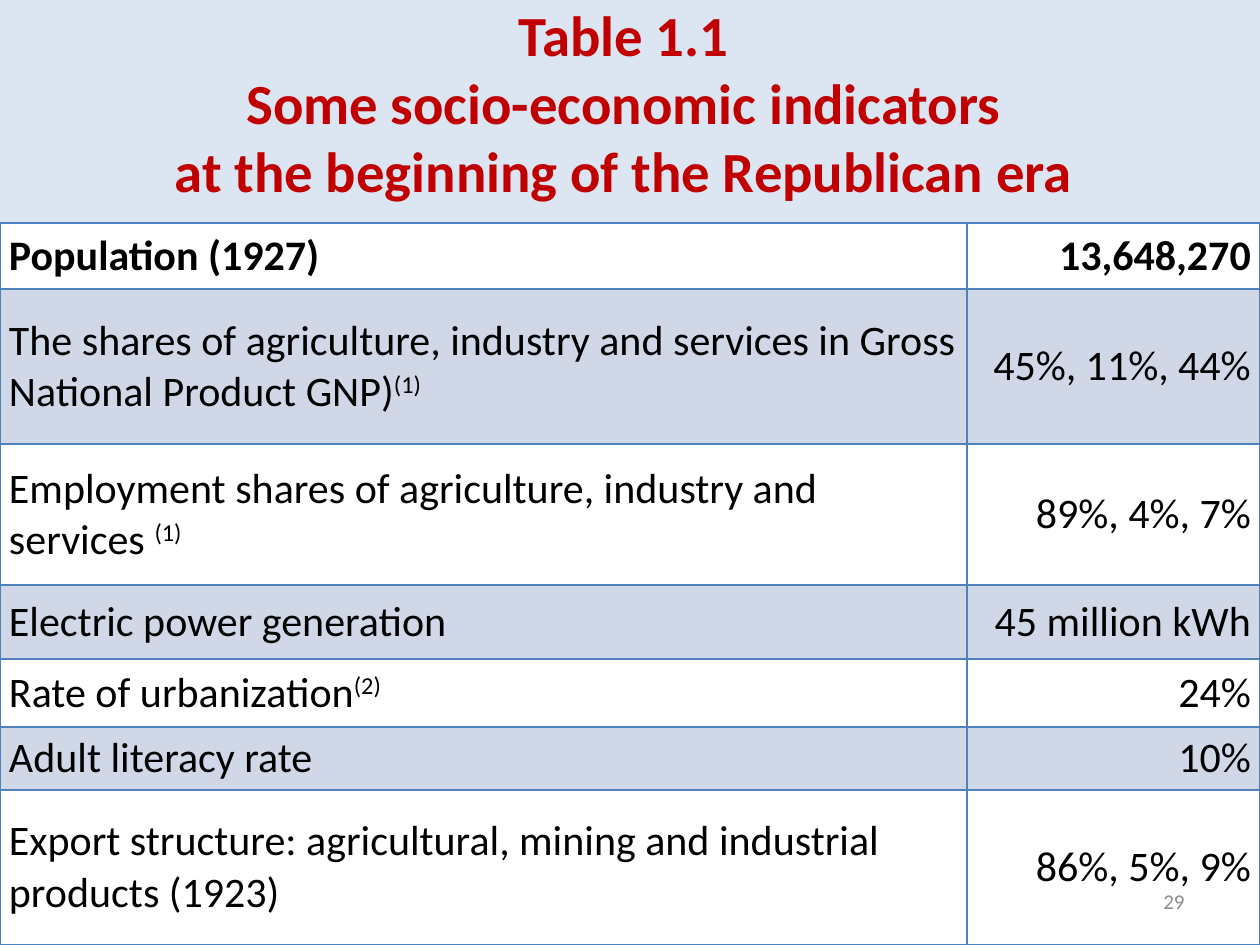
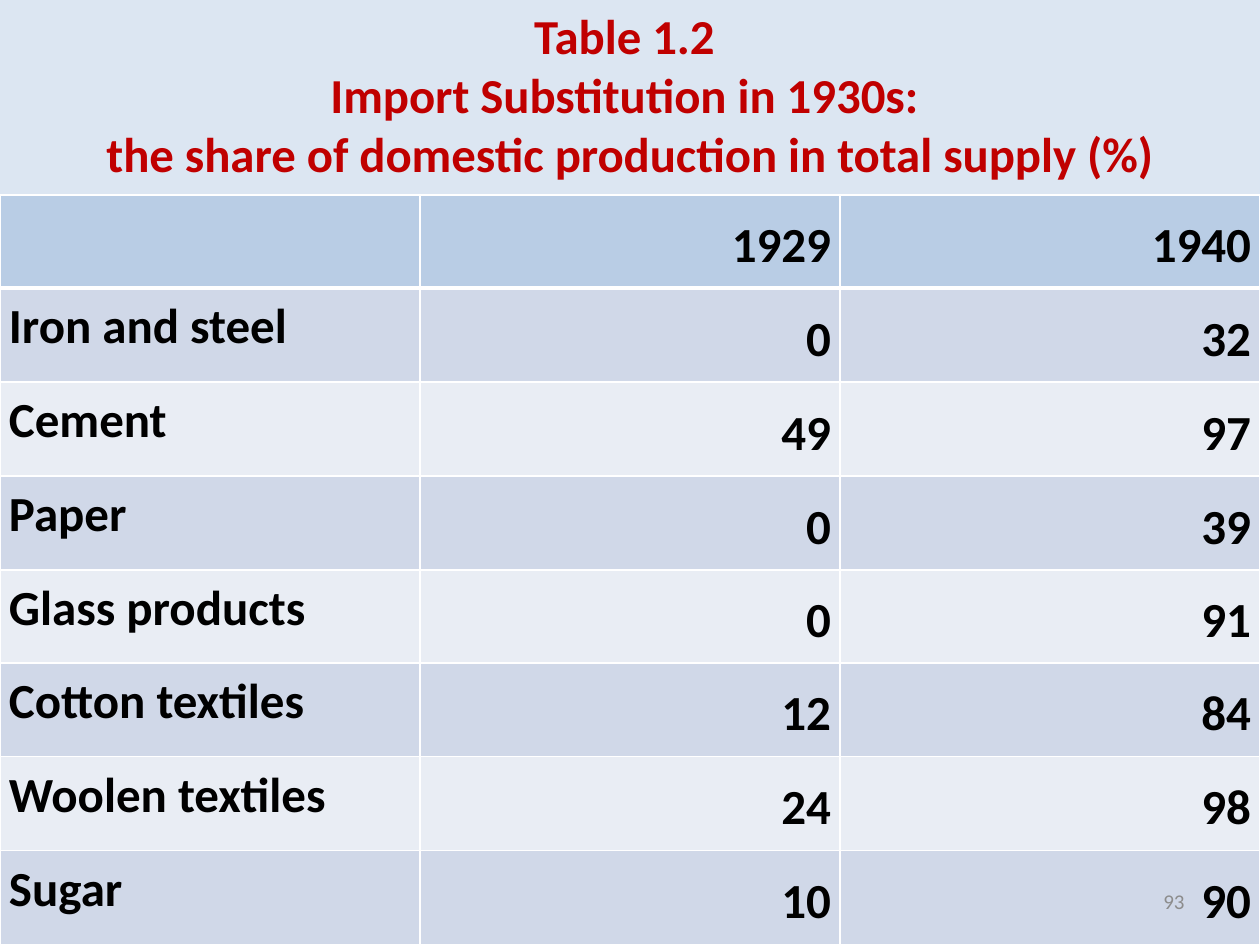
"""Build two slides of economic tables under shared red titles."""

from dataclasses import dataclass
from typing import Optional

from lxml.etree import SubElement
from pptx import Presentation
from pptx.dml.color import RGBColor
from pptx.enum.text import MSO_ANCHOR, MSO_AUTO_SIZE, PP_ALIGN
from pptx.oxml.ns import qn
from pptx.util import Emu, Pt

PX_PER_INCH = 126
PAGE_WIDTH, PAGE_HEIGHT = 1260, 945
CELL_MARGIN = 9
FONT = "Calibri"

BLACK = RGBColor(0x00, 0x00, 0x00)
WHITE = RGBColor(0xFF, 0xFF, 0xFF)
TITLE_RED = RGBColor(0xC0, 0x00, 0x00)
TITLE_BAND = RGBColor(0xDC, 0xE6, 0xF2)
NUMBER_GREY = RGBColor(0x8C, 0x8C, 0x8C)
GRID_BLUE = RGBColor(0x4F, 0x81, 0xBD)
HEADER_BLUE = RGBColor(0xB9, 0xCD, 0xE5)
DARK_BAND = RGBColor(0xD0, 0xD8, 0xE8)
LIGHT_BAND = RGBColor(0xE9, 0xED, 0xF4)


@dataclass(frozen=True)
class Row:
    """One table row: its label, values and optional raised note mark."""
    label: str
    values: tuple[str, ...]
    note: str = ""


@dataclass(frozen=True)
class TableStyle:
    """The look of one table."""
    size: int
    grid: RGBColor
    header_fill: Optional[RGBColor]
    band_fills: tuple[Optional[RGBColor], Optional[RGBColor]]
    header_rule: int
    bold_body: bool
    label_align: PP_ALIGN
    label_anchor: MSO_ANCHOR
    line_spacing: float


@dataclass(frozen=True)
class TablePage:
    """One slide: title band, table and page number."""
    title: tuple[str, ...]
    title_size: float
    title_height: int
    title_bottom: int
    columns: tuple[int, ...]
    heights: tuple[int, ...]
    rows: tuple[Row, ...]
    style: TableStyle
    number: str


def px(length: int) -> Emu:
    """Turn pixels into EMU."""
    return Emu(round(length * 914400 / PX_PER_INCH))


def equal_parts(total: int, count: int) -> tuple[int, ...]:
    """Split a length into whole parts that add up to it."""
    return tuple(total * (i + 1) // count - total * i // count for i in range(count))


def add_span(para, text: str, size: float, color: RGBColor, bold: bool = False,
             raised: bool = False) -> None:
    """Add one formatted run to a paragraph."""
    span = para.add_run()
    span.text = text
    span.font.name = FONT
    span.font.size = Pt(size)
    span.font.bold = bold
    span.font.color.rgb = color
    if raised:
        span._r.get_or_add_rPr().set("baseline", "30000")


def add_title(page, content: TablePage) -> None:
    """Fill the title placeholder and turn it into the top band."""
    box = page.shapes.title
    box.left, box.top = px(0), px(0)
    box.width, box.height = px(PAGE_WIDTH), px(content.title_height)
    box.fill.solid()
    box.fill.fore_color.rgb = TITLE_BAND
    frame = box.text_frame
    frame.auto_size = MSO_AUTO_SIZE.NONE
    frame.word_wrap = True
    frame.vertical_anchor = MSO_ANCHOR.MIDDLE
    frame.margin_top, frame.margin_bottom = px(0), px(content.title_bottom)
    for index, line in enumerate(content.title):
        para = frame.add_paragraph() if index else frame.paragraphs[0]
        para.alignment = PP_ALIGN.CENTER
        add_span(para, line, content.title_size, TITLE_RED, bold=True)


def set_borders(cell, color: RGBColor, top: int, bottom: int) -> None:
    """Draw the four borders of a cell, widths in points."""
    properties = cell._tc.get_or_add_tcPr()
    for side, width in (("L", 1), ("R", 1), ("T", top), ("B", bottom)):
        line = SubElement(properties, qn(f"a:ln{side}"), w=str(Pt(width)))
        fill = SubElement(line, qn("a:solidFill"))
        SubElement(fill, qn("a:srgbClr"), val=str(color))


def format_cell(cell, style: TableStyle, row_index: int) -> None:
    """Give a cell its borders, fill and margins."""
    set_borders(cell, style.grid,
                top=style.header_rule if row_index == 1 else 1,
                bottom=style.header_rule if row_index == 0 else 1)
    fill = style.band_fills[(row_index - 1) % 2] if row_index else style.header_fill
    if fill is None:
        cell.fill.background()
    else:
        cell.fill.solid()
        cell.fill.fore_color.rgb = fill
    cell.margin_left = cell.margin_right = px(CELL_MARGIN)
    cell.margin_top = cell.margin_bottom = px(0)


def add_data_table(page, content: TablePage) -> None:
    """Add the table that fills the page below the title."""
    style = content.style
    table = page.shapes.add_table(
        len(content.rows), len(content.columns), px(0), px(content.title_height),
        px(PAGE_WIDTH), px(sum(content.heights))).table
    table.first_row = table.horz_banding = False
    for column, width in zip(table.columns, content.columns):
        column.width = px(width)
    for row_index, row in enumerate(content.rows):
        table.rows[row_index].height = px(content.heights[row_index])
        bold = style.bold_body or row_index == 0
        for column_index, text in enumerate((row.label, *row.values)):
            cell = table.cell(row_index, column_index)
            format_cell(cell, style, row_index)
            is_label = column_index == 0
            cell.vertical_anchor = style.label_anchor if is_label else MSO_ANCHOR.MIDDLE
            para = cell.text_frame.paragraphs[0]
            para.alignment = style.label_align if is_label else PP_ALIGN.RIGHT
            para.line_spacing = style.line_spacing
            if text:
                add_span(para, text, style.size, BLACK, bold)
            if is_label and row.note:
                add_span(para, row.note, style.size, BLACK, bold, raised=True)


def add_page_number(page, number: str) -> None:
    """Add the grey page number at the lower right."""
    box = page.shapes.add_textbox(px(903), px(876), px(294), px(50))
    frame = box.text_frame
    frame.word_wrap = True
    frame.vertical_anchor = MSO_ANCHOR.MIDDLE
    para = frame.paragraphs[0]
    para.alignment = PP_ALIGN.RIGHT
    add_span(para, number, 12, NUMBER_GREY)


INDICATOR_STYLE = TableStyle(
    size=24, grid=GRID_BLUE, header_fill=None, band_fills=(DARK_BAND, None),
    header_rule=1, bold_body=False, label_align=PP_ALIGN.LEFT,
    label_anchor=MSO_ANCHOR.MIDDLE, line_spacing=1.0)

SUBSTITUTION_STYLE = TableStyle(
    size=28, grid=WHITE, header_fill=HEADER_BLUE, band_fills=(DARK_BAND, LIGHT_BAND),
    header_rule=3, bold_body=True, label_align=PP_ALIGN.JUSTIFY,
    label_anchor=MSO_ANCHOR.TOP, line_spacing=1.15)

PAGES = (
    TablePage(
        title=("Table 1.1 ", "Some socio-economic indicators ",
               "at the beginning of the Republican era "),
        title_size=32.4, title_height=223, title_bottom=20,
        columns=(967, 293), heights=(66, 155, 141, 74, 68, 63, 155),
        rows=(
            Row("Population (1927)", ("13,648,270",)),
            Row("The shares of agriculture, industry and services in Gross "
                "National Product GNP)", ("45%, 11%, 44%",), "(1)"),
            Row("Employment shares of agriculture, industry and services ",
                ("89%, 4%, 7%",), "(1)"),
            Row("Electric power generation", ("45 million kWh",)),
            Row("Rate of urbanization", ("24%",), "(2)"),
            Row("Adult literacy rate", ("10%",)),
            Row("Export structure: agricultural, mining and industrial "
                "products (1923)", ("86%, 5%, 9%",)),
        ),
        style=INDICATOR_STYLE, number="29"),
    TablePage(
        title=("Table 1.2 ", "Import Substitution in 1930s: ",
               "the share of domestic production in total supply (%)"),
        title_size=27.9, title_height=195, title_bottom=7,
        columns=equal_parts(PAGE_WIDTH, 3), heights=equal_parts(PAGE_HEIGHT - 195, 8),
        rows=(
            Row("", ("1929", "1940")),
            Row("Iron and steel", ("0", "32")),
            Row("Cement", ("49", "97")),
            Row("Paper", ("0", "39")),
            Row("Glass products", ("0", "91")),
            Row("Cotton textiles", ("12", "84")),
            Row("Woolen textiles", ("24", "98")),
            Row("Sugar", ("10", "90")),
        ),
        style=SUBSTITUTION_STYLE, number="93"),
)


def main() -> None:
    """Build and save the deck."""
    deck = Presentation()
    deck.slide_width, deck.slide_height = px(PAGE_WIDTH), px(PAGE_HEIGHT)
    title_only = deck.slide_layouts[5]
    for content in PAGES:
        page = deck.slides.add_slide(title_only)
        add_title(page, content)
        add_data_table(page, content)
        add_page_number(page, content.number)
    deck.save("out.pptx")


if __name__ == "__main__":
    main()
